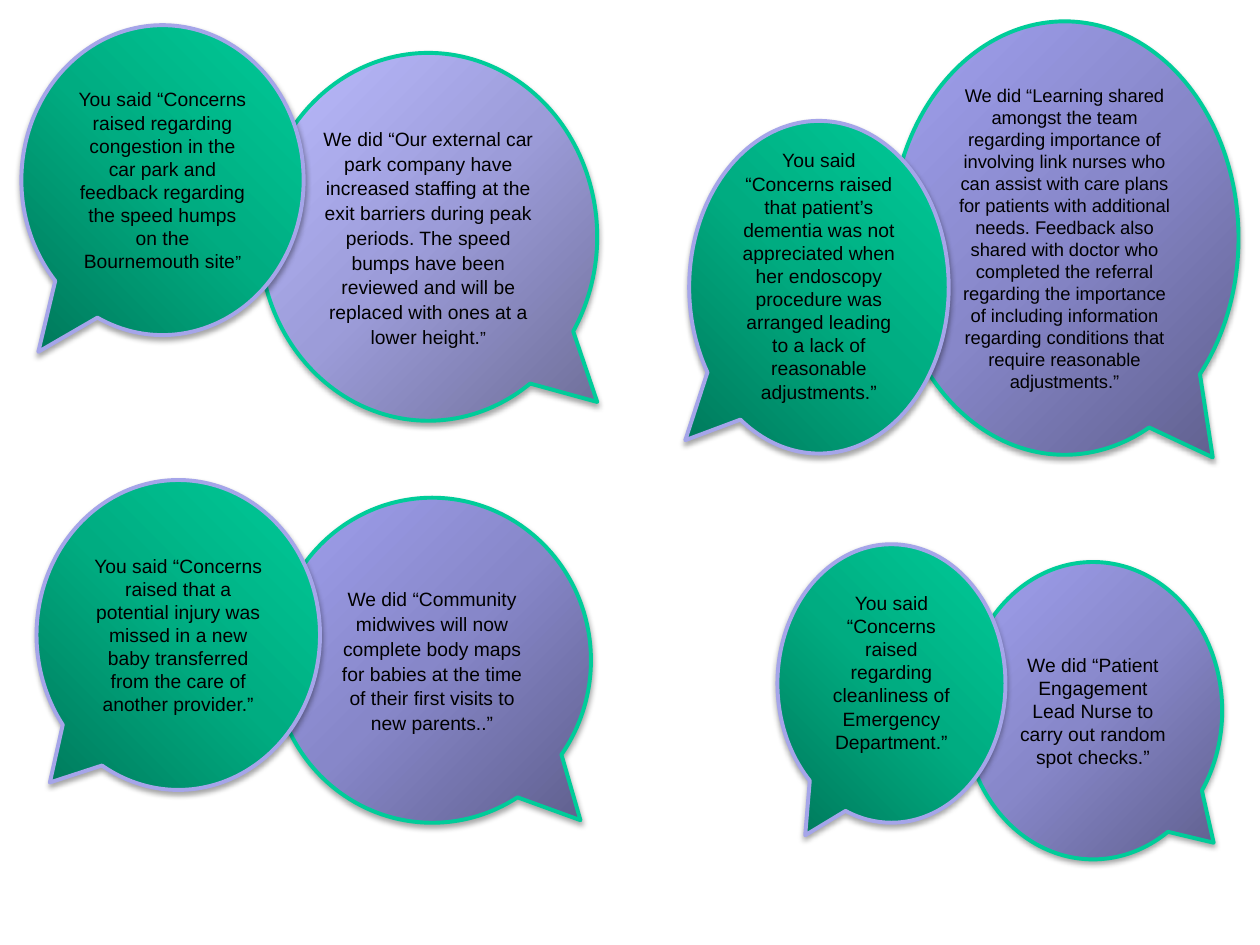
from dataclasses import dataclass

import pptx
import pptx.dml.color
import pptx.enum.shapes
import pptx.enum.text
import pptx.oxml
import pptx.oxml.ns
import pptx.util
from lxml import etree


@dataclass(frozen=True)
class Theme:
    font: str = "Arial"
    text: str = "000000"
    size: float = 11
    small: float = 10.5
    quote: float = 10
    line_width: float = 2.25
    green: tuple = ("00795B", "00AC81", "00CC99")
    purple: tuple = ("5F5F8D", "8787C9", "A0A0EE")
    light_purple: tuple = ("6E6E98", "9C9CD9", "BBBBFF")
    green_line: str = "00CC99"
    purple_line: str = "A5A5E9"


THEME = Theme()
WIDTH, HEIGHT = 10, 7.5
SAID = dict(stops=THEME.green, line=THEME.purple_line, dark_corner="left")
DID = dict(stops=THEME.purple, line=THEME.green_line, dark_corner="right")
LOOSE = dict(spacing=1.07, after=8)
LIFTED = dict(bottom=0.23)

# Back to front: box (left, top, width, height in % of the slide),
# tail tip (share of the bubble, from its centre), runs (text, size), style.
BUBBLES = [
    ((76.5, 59.47, 20.5, 31.47), (0.467, 0.444),
     [("We did “Patient Engagement Lead Nurse to carry out random spot checks.”",
       THEME.size)], DID),
    ((21.7, 52.67, 25.2, 34.4), (0.467, 0.492),
     [("We did “Community midwives will now complete body maps for babies at "
       "the time of their first visits to new parents..”", THEME.size)],
     DID | LOOSE),
    ((2.9, 50.8, 22.5, 32.8), (-0.453, 0.476),
     [("You said “Concerns raised that a potential injury was missed in a new "
       "baby transferred from the care of another provider.”", THEME.size)],
     SAID),
    ((20.6, 5.6, 26.8, 38.93), (0.5, 0.449),
     [("We did “Our external car park company have increased staffing at the "
       "exit barriers during peak periods. The speed bumps have been reviewed "
       "and will be replaced with ones at a lower height.", THEME.size),
      ("”", THEME.quote)],
     DID | LOOSE | dict(stops=THEME.light_purple)),
    ((70.7, 2.27, 27.6, 45.87), (0.426, 0.506),
     [("We did “Learning shared amongst the team regarding importance of "
       "involving link nurses who can assist with care plans for patients with "
       "additional needs. Feedback also shared with doctor who completed the "
       "referral regarding the importance of including information regarding "
       "conditions that require reasonable adjustments.”", THEME.small)], DID),
    ((61.7, 57.6, 18.1, 29.47), (-0.378, 0.545),
     [("You said “Concerns raised regarding cleanliness of Emergency "
       "Department.”", THEME.size)], SAID | LIFTED),
    ((54.7, 12.8, 20.6, 35.2), (-0.515, 0.46),
     [("You said “Concerns raised that patient’s dementia was not appreciated "
       "when her endoscopy procedure was arranged leading to a lack of "
       "reasonable adjustments.”", THEME.size)], SAID | LIFTED),
    ((1.7, 2.67, 22.4, 32.8), (-0.44, 0.554),
     [("You said “Concerns raised regarding congestion in the car park and "
       "feedback regarding the speed humps on the Bournemouth site", THEME.size),
      ("”", THEME.quote)], SAID),
]


def rgb(value):
    return pptx.dml.color.RGBColor.from_string(value)


def add_radial_fill(sp, stops, dark_corner):
    """Fill with a gradient spreading from a bottom corner."""
    left, right = (0, 100000) if dark_corner == "left" else (100000, 0)
    marks = "".join(
        f'<a:gs pos="{i * 50000}"><a:srgbClr val="{color}"/></a:gs>'
        for i, color in enumerate(stops))
    sp._element.spPr.append(pptx.oxml.parse_xml(
        f'<a:gradFill {pptx.oxml.ns.nsdecls("a")} rotWithShape="1">'
        f'<a:gsLst>{marks}</a:gsLst><a:path path="circle">'
        f'<a:fillToRect l="{left}" t="100000" r="{right}" b="0"/>'
        f'</a:path></a:gradFill>'))


def add_shadow(sp):
    sp.shadow.inherit = False
    effects = sp._element.spPr.find(pptx.oxml.ns.qn("a:effectLst"))
    shadow = etree.SubElement(
        effects, pptx.oxml.ns.qn("a:outerShdw"), blurRad="40000", dist="23000",
        dir="5400000", rotWithShape="0")
    color = etree.SubElement(shadow, pptx.oxml.ns.qn("a:srgbClr"), val="000000")
    etree.SubElement(color, pptx.oxml.ns.qn("a:alpha"), val="35000")


def add_bubble(slide, box, tail, runs, stops, line, dark_corner,
               spacing=None, after=None, bottom=0.05):
    place = [pptx.util.Inches(share * side / 100)
             for share, side in zip(box, (WIDTH, HEIGHT) * 2)]
    sp = slide.shapes.add_shape(
        pptx.enum.shapes.MSO_SHAPE.OVAL_CALLOUT, *place)
    sp.adjustments[0], sp.adjustments[1] = tail
    add_radial_fill(sp, stops, dark_corner)
    sp.line.color.rgb = rgb(line)
    sp.line.width = pptx.util.Pt(THEME.line_width)
    add_shadow(sp)

    tf = sp.text_frame
    tf.word_wrap = True
    tf.vertical_anchor = pptx.enum.text.MSO_ANCHOR.MIDDLE
    tf.margin_bottom = pptx.util.Inches(bottom)
    p = tf.paragraphs[0]
    p.alignment = pptx.enum.text.PP_ALIGN.CENTER
    if spacing:
        p.line_spacing = spacing
        p.space_after = pptx.util.Pt(after)
    for text, size in runs:
        r = p.add_run()
        r.text = text
        r.font.name = THEME.font
        r.font.size = pptx.util.Pt(size)
        r.font.color.rgb = rgb(THEME.text)


def main():
    prs = pptx.Presentation()
    prs.slide_width = pptx.util.Inches(WIDTH)
    prs.slide_height = pptx.util.Inches(HEIGHT)
    slide = prs.slides.add_slide(prs.slide_layouts[6])
    for box, tail, runs, style in BUBBLES:
        add_bubble(slide, box, tail, runs, **style)
    prs.save("out.pptx")


if __name__ == "__main__":
    main()
